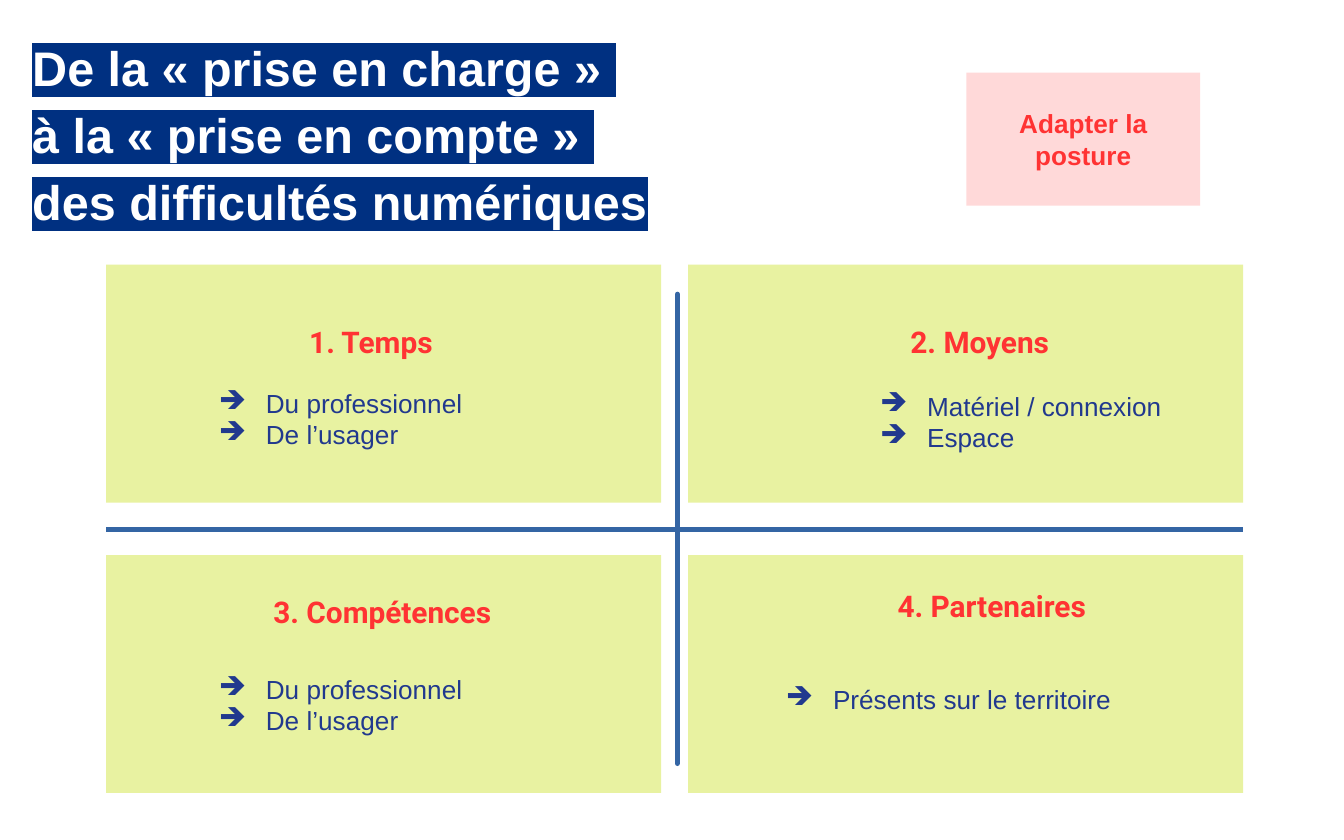
from lxml.etree import SubElement
from pptx import Presentation
from pptx.dml.color import RGBColor
from pptx.enum.shapes import MSO_CONNECTOR, MSO_SHAPE
from pptx.enum.text import MSO_ANCHOR, PP_ALIGN
from pptx.oxml.ns import qn
from pptx.util import Inches, Pt

NAVY = RGBColor(0x00, 0x30, 0x81)
INK = RGBColor(0x21, 0x39, 0x8E)
BLUE = RGBColor(0x34, 0x65, 0xA4)
RED = RGBColor(0xFF, 0x33, 0x33)
PINK = RGBColor(0xFF, 0xD9, 0xD9)
LIME = RGBColor(0xE8, 0xF2, 0xA1)
WHITE = RGBColor(0xFF, 0xFF, 0xFF)

LEFT, TOP = 0.79, 1.97
CARD_W, CARD_H = 4.13, 1.77
STEP_X, STEP_Y = 4.33, 2.16

# Heading, its box in the card (left, top, width), items, their box in the card
CARDS = [
    ("1. Temps", (1.38, 0.44, 1.18),
     ["Du professionnel", "De l’usager"], (0.59, 0.93, 3.34)),
    ("2. Moyens", (0.98, 0.44, 2.38),
     ["Matériel / connexion", "Espace"], (1.18, 0.95, 3.34)),
    ("3. Compétences", (0.78, 0.29, 2.55),
     ["Du professionnel", "De l’usager"], (0.59, 0.9, 3.34)),
    ("4. Partenaires", (1.18, 0.24, 2.16),
     ["Présents sur le territoire"], (0.48, 0.86, 3.53)),
]


def set_font(para, name, size, color, bold=False):
    font = para.font
    font.name, font.size, font.bold = name, Pt(size), bold
    font.color.rgb = color


def set_frame(frame, inset, anchor=MSO_ANCHOR.TOP):
    frame.word_wrap = True
    frame.vertical_anchor = anchor
    frame.margin_left = frame.margin_right = Inches(inset)
    frame.margin_top = frame.margin_bottom = Inches(inset)


def add_text(slide, box, lines, inset, anchor=MSO_ANCHOR.TOP):
    frame = slide.shapes.add_textbox(*map(Inches, box)).text_frame
    set_frame(frame, inset, anchor)
    frame.text = "\n".join(lines)
    return frame.paragraphs


def add_block(slide, box, color):
    shape = slide.shapes.add_shape(MSO_SHAPE.RECTANGLE, *map(Inches, box))
    shape.shadow.inherit = False
    shape.fill.solid()
    shape.fill.fore_color.rgb = color
    shape.line.fill.background()
    return shape


def add_bullet(para):
    props = para._p.get_or_add_pPr()
    props.set("marL", str(Inches(0.5)))
    props.set("indent", str(Inches(-0.35)))
    tint = SubElement(props, qn("a:buClr"))
    SubElement(tint, qn("a:srgbClr"), val=str(INK))
    SubElement(props, qn("a:buChar"), char="➔")


def add_title(slide, box):
    lines = ["De la «\u00a0prise en charge\u00a0» ",
             "à la «\u00a0prise en compte\u00a0» ",
             "des difficultés numériques"]
    for para in add_text(slide, box, lines, 0.04):
        para.line_spacing = 1.15
        set_font(para, "Arial", 26, WHITE, True)
        props = para.runs[0].font._element
        mark = SubElement(props, qn("a:highlight"))
        SubElement(mark, qn("a:srgbClr"), val=str(NAVY))


def add_tag(slide, box):
    frame = add_block(slide, box, PINK).text_frame
    set_frame(frame, 0.1, MSO_ANCHOR.MIDDLE)
    frame.text = "Adapter la posture"
    para = frame.paragraphs[0]
    para.alignment = PP_ALIGN.CENTER
    set_font(para, "Arial", 14, RED, True)


def add_card(slide, box, head, head_box, items, list_box):
    left, top = box[:2]
    add_block(slide, box, LIME)
    x, y, width = head_box
    para = add_text(slide, (left + x, top + y, width, 0.31), [head], 0)[0]
    para.alignment = PP_ALIGN.CENTER
    set_font(para, "Roboto", 16, RED, True)
    x, y, width = list_box
    area = (left + x, top + y, width, 0.43)
    for para in add_text(slide, area, items, 0.1, MSO_ANCHOR.MIDDLE):
        add_bullet(para)
        set_font(para, "Arial", 14, INK)


def add_rule(slide, start, end, cap):
    rule = slide.shapes.add_connector(
        MSO_CONNECTOR.STRAIGHT, *map(Inches, start + end))
    rule.line.color.rgb = BLUE
    rule.line.width = Pt(2.83)
    rule.line._get_or_add_ln().set("cap", cap)
    SubElement(rule._element.spPr, qn("a:effectLst"))


def add_grid(slide, left, top):
    for i, card in enumerate(CARDS):
        row, col = divmod(i, 2)
        box = (left + col * STEP_X, top + row * STEP_Y, CARD_W, CARD_H)
        add_card(slide, box, *card)
    mid_x, mid_y = left + 4.25, top + 1.97
    add_rule(slide, (mid_x, top + 0.22), (mid_x, top + 3.71), "rnd")
    add_rule(slide, (left, mid_y), (left + STEP_X + CARD_W, mid_y), "flat")


def main():
    deck = Presentation()
    deck.slide_width, deck.slide_height = Inches(10), Inches(6.25)
    slide = deck.slides.add_slide(deck.slide_layouts[6])
    add_title(slide, (0.2, 0.18, 8.3, 1.74))
    add_tag(slide, (7.19, 0.54, 1.74, 0.99))
    add_grid(slide, LEFT, TOP)
    deck.save("out.pptx")


if __name__ == "__main__":
    main()
